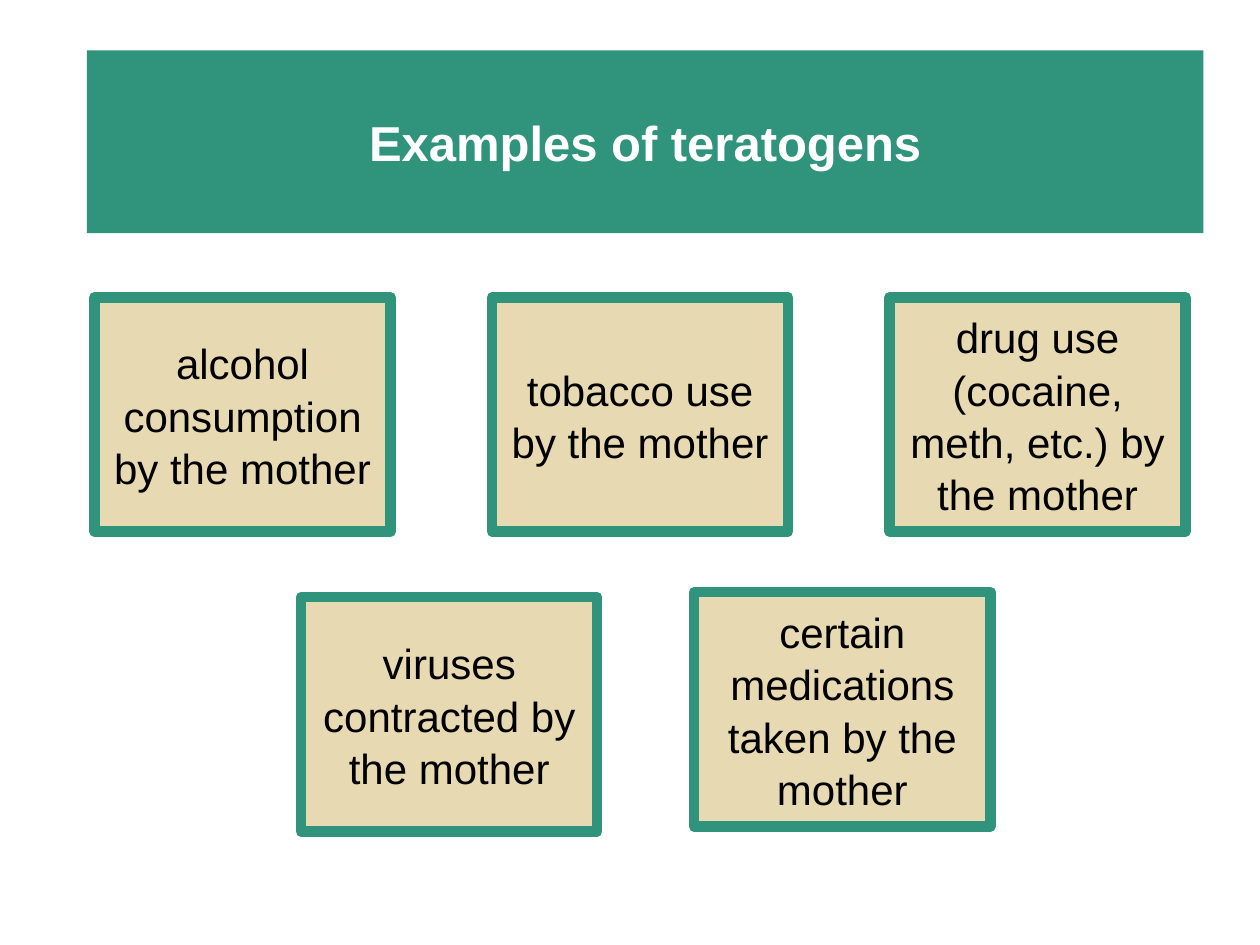
"""Build a slide with a title band and five boxes of example teratogens."""
from dataclasses import dataclass

from pptx import Presentation
from pptx.dml.color import RGBColor as Rgb
from pptx.enum.shapes import MSO_SHAPE as Shape
from pptx.enum.text import MSO_ANCHOR as Anchor, PP_ALIGN as Align
from pptx.util import Inches, Pt

TITLE = "Examples of teratogens"
ROWS = [
    {"left": 0.75, "pitch": 3.155, "tops": (2.36, 2.36, 2.36),
     "examples": ("alcohol consumption by the mother",
                  "tobacco use by the mother",
                  "drug use (cocaine, meth, etc.) by the mother")},
    {"left": 2.39, "pitch": 3.12, "tops": (4.74, 4.7),
     "examples": ("viruses contracted by the mother",
                  "certain medications taken by the mother")},
]
BAND = (0.69, 0.4, 8.86, 1.45)
BOX_SIZE = (2.35, 1.86)


@dataclass(frozen=True)
class Theme:
    green: Rgb = Rgb(0x30, 0x93, 0x7B)
    sand: Rgb = Rgb(0xE7, 0xD9, 0xB1)
    white: Rgb = Rgb(255, 255, 255)
    black: Rgb = Rgb(0, 0, 0)
    font: str = "Arial"
    title_size: int = 28
    box_size: int = 24
    border: int = 6
    leading: float = 1.04


THEME = Theme()


def fill_and_write(shape, fill, text, size, color, bold=False):
    shape.fill.solid()
    shape.fill.fore_color.rgb = fill
    frame = shape.text_frame
    frame.text = text
    frame.word_wrap = True
    frame.vertical_anchor = Anchor.MIDDLE
    paragraph = frame.paragraphs[0]
    paragraph.alignment = Align.CENTER
    font = paragraph.font
    font.name, font.size, font.bold = THEME.font, Pt(size), bold
    font.color.rgb = color


def add_example(slide, text, left, top):
    box = slide.shapes.add_shape(
        Shape.RECTANGLE, *map(Inches, (left, top, *BOX_SIZE)))
    box.shadow.inherit = False
    box.line.color.rgb = THEME.green
    box.line.width = Pt(THEME.border)
    fill_and_write(box, THEME.sand, text, THEME.box_size, THEME.black)
    box.text_frame.paragraphs[0].line_spacing = THEME.leading


def main():
    deck = Presentation()
    deck.slide_width, deck.slide_height = Inches(10), Inches(7.5)
    slide = deck.slides.add_slide(deck.slide_layouts.get_by_name("Title Only"))
    title = slide.shapes.title
    title.left, title.top, title.width, title.height = map(Inches, BAND)
    fill_and_write(title, THEME.green, TITLE, THEME.title_size, THEME.white, True)
    for row in ROWS:
        for column, (text, top) in enumerate(zip(row["examples"], row["tops"])):
            add_example(slide, text, row["left"] + column * row["pitch"], top)
    deck.save("out.pptx")


if __name__ == "__main__":
    main()
